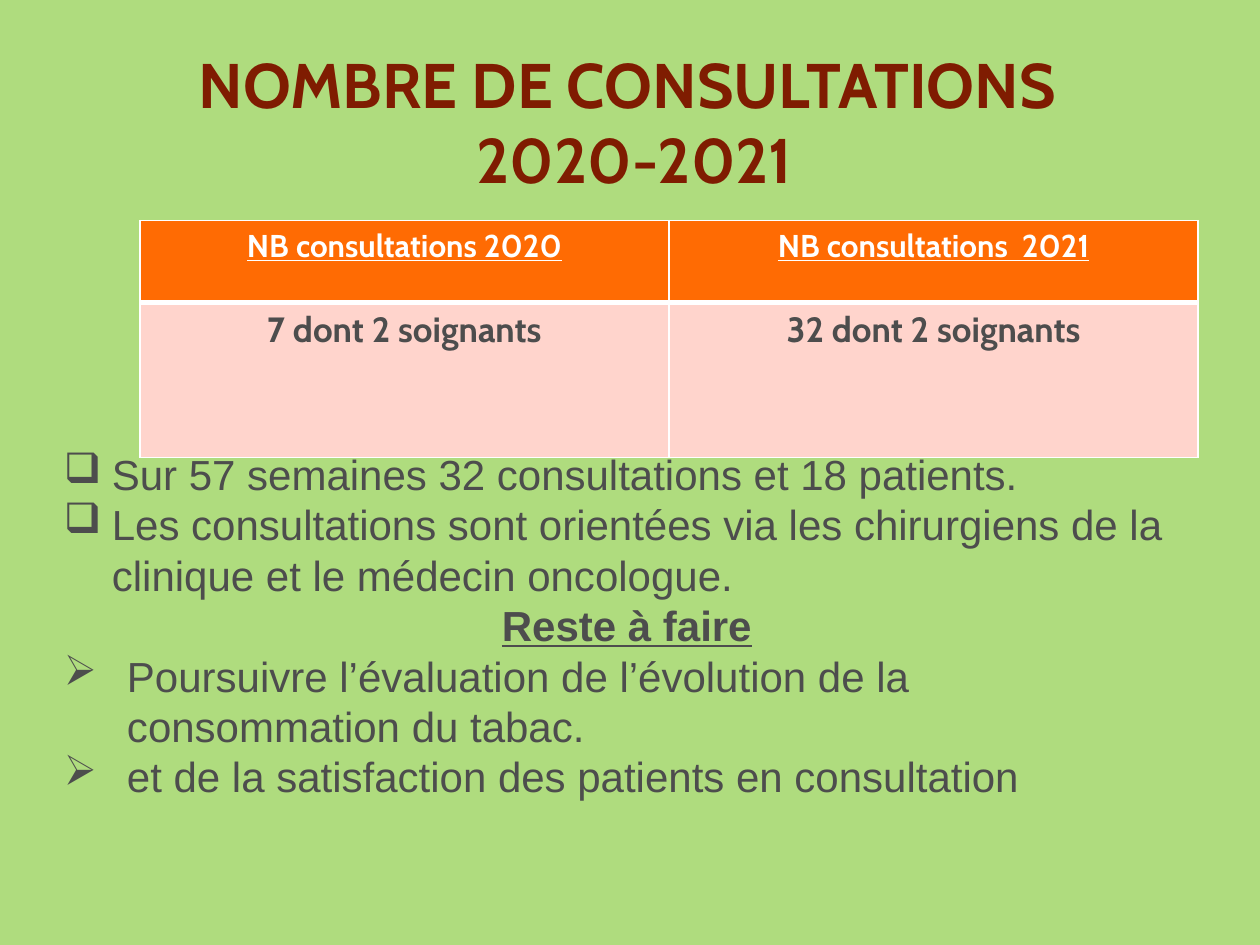
from lxml import etree
from pptx import Presentation
from pptx.dml.color import RGBColor
from pptx.enum import text as t
from pptx.oxml import ns
from pptx.util import Inches, Pt

GREEN = RGBColor(0xAF, 0xDC, 0x7E)
BROWN = RGBColor(0x7F, 0x1C, 0x01)
ORANGE = RGBColor(0xFF, 0x6B, 0x03)
PINK = RGBColor(0xFF, 0xD4, 0xCC)
GREY = RGBColor(0x4D, 0x4D, 0x4D)
WHITE = RGBColor(0xFF, 0xFF, 0xFF)


def add_run(paragraph, words, font, size, color, bold=False, underline=False):
    run = paragraph.add_run()
    run.text = words
    run.font.name = font
    run.font.size = Pt(size)
    run.font.color.rgb = color
    run.font.bold = bold
    run.font.underline = underline


def add_border(cell, side, width):
    line = etree.Element(ns.qn(f"a:{side}"), w=str(Pt(width)))
    fill = etree.SubElement(line, ns.qn("a:solidFill"))
    etree.SubElement(fill, ns.qn("a:srgbClr"), val=str(WHITE))
    return line


prs = Presentation()
prs.slide_width, prs.slide_height = Inches(10), Inches(7.5)
slide = prs.slides.add_slide(prs.slide_layouts[6])
slide.background.fill.solid()
slide.background.fill.fore_color.rgb = GREEN

title = slide.shapes.add_textbox(Inches(0.43), Inches(0.29), Inches(9.21), Inches(1.34)).text_frame
title.word_wrap = True
title.vertical_anchor = t.MSO_ANCHOR.MIDDLE
heading = title.paragraphs[0]
heading.alignment = t.PP_ALIGN.CENTER
add_run(heading, "NOMBRE DE CONSULTATIONS ", "Cabin", 36, BROWN, bold=True)
heading.add_line_break()
add_run(heading, "2020-2021", "Cabin", 36, BROWN, bold=True)

consultations = slide.shapes.add_table(
    2, 2, Inches(1.11), Inches(1.75), Inches(8.4), Inches(1.88)
).table
rows = [
    (0.65, ["NB consultations 2020", "NB consultations  2021"], 18, WHITE, ORANGE, True),
    (1.23, ["7 dont 2 soignants", "32 dont 2 soignants"], 20, GREY, PINK, False),
]
for r, (height, entries, size, color, background, is_header) in enumerate(rows):
    consultations.rows[r].height = Inches(height)
    for c, entry in enumerate(entries):
        cell = consultations.cell(r, c)
        cell.fill.solid()
        cell.fill.fore_color.rgb = background
        paragraph = cell.text_frame.paragraphs[0]
        paragraph.alignment = t.PP_ALIGN.CENTER
        add_run(paragraph, entry, "Cabin", size, color, bold=True, underline=is_header)
        properties = cell._tc.get_or_add_tcPr()
        top, bottom = (1, 3) if is_header else (3, 1)
        for i, (side, width) in enumerate([("lnL", 1), ("lnR", 1), ("lnT", top), ("lnB", bottom)]):
            properties.insert(i, add_border(cell, side, width))

summary = slide.shapes.add_textbox(Inches(0.41), Inches(3.51), Inches(9.13), Inches(3.4)).text_frame
summary.word_wrap = True
points = [
    ("❑", 0.38, "Sur 57 semaines 32 consultations et 18 patients."),
    ("❑", 0.38, "Les consultations sont orientées via les chirurgiens de la clinique et le médecin oncologue."),
    (None, 0, "Reste à faire"),
    ("➢", 0.5, "Poursuivre l’évaluation de l’évolution de la consommation du tabac."),
    ("➢", 0.5, "et de la satisfaction des patients en consultation"),
]
for i, (bullet, indent, words) in enumerate(points):
    paragraph = summary.add_paragraph() if i else summary.paragraphs[0]
    paragraph.line_spacing = Pt(28.8)
    is_subtitle = bullet is None
    add_run(paragraph, words, "Arial", 24, GREY, bold=is_subtitle, underline=is_subtitle)
    if is_subtitle:
        paragraph.alignment = t.PP_ALIGN.CENTER
    else:
        properties = paragraph._p.get_or_add_pPr()
        properties.set("marL", str(Inches(indent)))
        properties.set("indent", str(-Inches(indent)))
        etree.SubElement(properties, ns.qn("a:buChar"), char=bullet)

prs.save("out.pptx")
